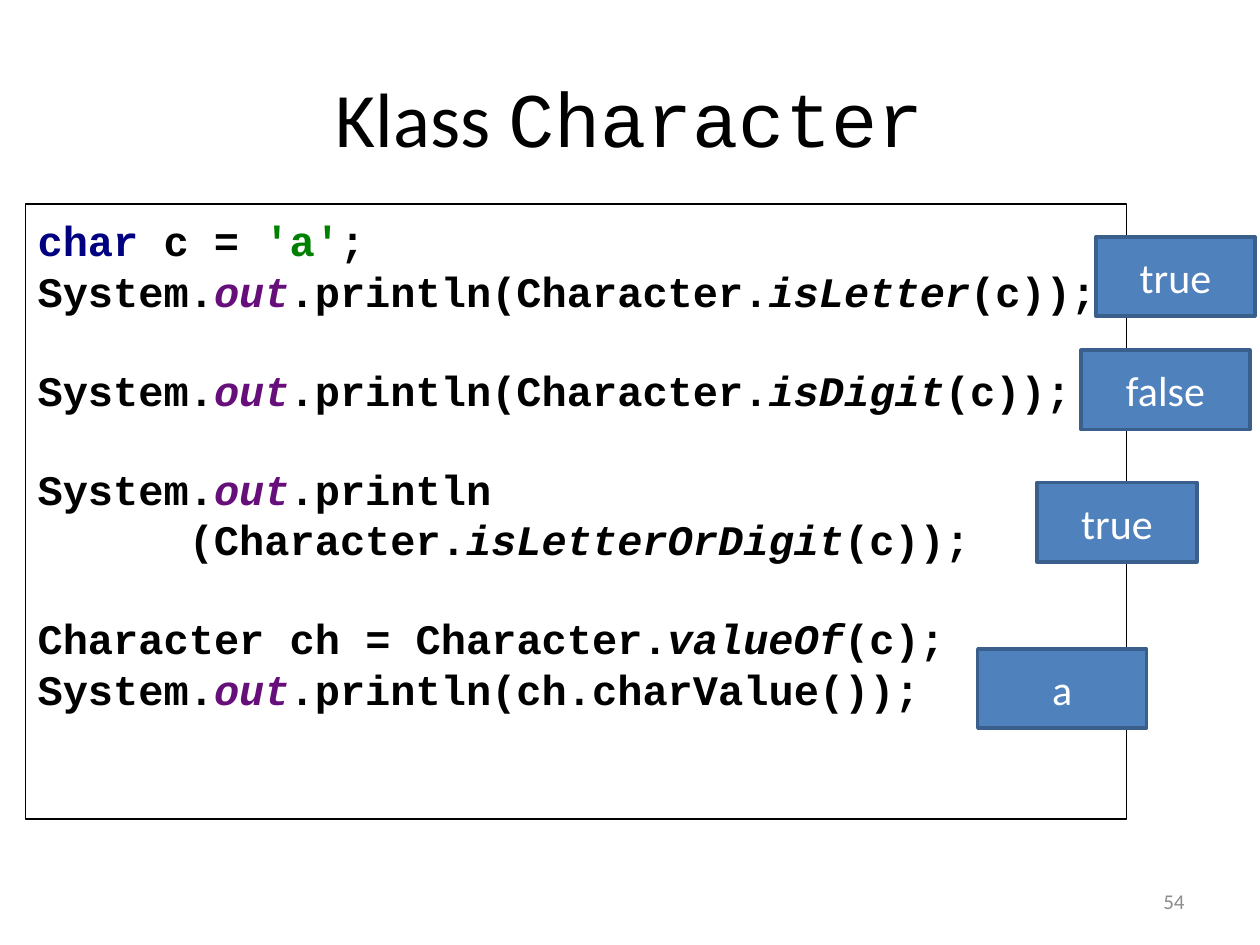
from pptx import Presentation
from pptx.dml.color import RGBColor
from pptx.enum.shapes import MSO_SHAPE
from pptx.enum.text import MSO_ANCHOR, PP_ALIGN
from pptx.util import Inches, Pt

COLORS = {
    "text": "000000", "keyword": "000080", "string": "008000",
    "field": "660E7A", "number": "8C8C8C", "white": "FFFFFF",
    "result": "4F81BD", "result_edge": "3A5F8C",
}
CODE_SIZE = 24
LINE_HEIGHT = 29
BLOCK_GAP = 27.5
INDENT = 1.2

STYLES = {
    "plain": {},
    "keyword": {"color": "keyword"},
    "string": {"color": "string"},
    "field": {"color": "field", "italic": True},
    "method": {"italic": True},
}
PRINT = [("System.", "plain"), ("out", "field")]


def check_call(method, opening):
    return [(opening, "plain"), (method, "method"), ("(c));", "plain")]


# Each line: space before, left indent, styled spans
CODE_LINES = [
    (0, 0, [("char ", "keyword"), ("c = ", "plain"), ("'a'", "string"), (";", "plain")]),
    (0, 0, PRINT + check_call("isLetter", ".println(Character.")),
    (BLOCK_GAP, 0, PRINT + check_call("isDigit", ".println(Character.")),
    (BLOCK_GAP, 0, PRINT + [(".println", "plain")]),
    (0, INDENT, check_call("isLetterOrDigit", "(Character.")),
    (BLOCK_GAP, 0, [("Character ch = Character.", "plain"), ("valueOf", "method"),
                    ("(c);", "plain")]),
    (0, 0, PRINT + [(".println(ch.charValue());", "plain")]),
]

# Each result: text, left, top, width
RESULTS = [
    ("true", 8.7, 1.88, 1.26),
    ("true", 8.23, 3.83, 1.27),
    ("false", 8.58, 2.78, 1.34),
    ("a", 7.76, 5.15, 1.34),
]


def rgb(name):
    return RGBColor.from_string(COLORS[name])


def add_span(para, text, size=CODE_SIZE, font="Calibri", color="text",
             bold=False, italic=False):
    span = para.add_run()
    span.text = text
    span.font.size = Pt(size)
    span.font.name = font
    span.font.bold = bold
    span.font.italic = italic
    span.font.color.rgb = rgb(color)


def add_box(slide, left, top, width, height, edge, edge_width, fill=None):
    box = slide.shapes.add_shape(MSO_SHAPE.RECTANGLE, Inches(left), Inches(top),
                                 Inches(width), Inches(height))
    box.shadow.inherit = False
    if fill:
        box.fill.solid()
        box.fill.fore_color.rgb = rgb(fill)
    else:
        box.fill.background()
    box.line.color.rgb = rgb(edge)
    box.line.width = Pt(edge_width)
    box.text_frame.word_wrap = True
    return box


def set_title(slide):
    title = slide.shapes.title
    title.left, title.top = Inches(0.5), Inches(0.3)
    title.width, title.height = Inches(9), Inches(1.25)
    title.text_frame.vertical_anchor = MSO_ANCHOR.MIDDLE
    para = title.text_frame.paragraphs[0]
    para.alignment = PP_ALIGN.CENTER
    add_span(para, "Klass ", size=44)
    add_span(para, "Character", size=44, font="Courier New")


def add_code(slide):
    frame = add_box(slide, 0.2, 1.62, 8.74, 4.88, "text", 0.75).text_frame
    frame.vertical_anchor = MSO_ANCHOR.TOP
    frame.margin_top = Inches(0.08)
    for index, (gap, indent, spans) in enumerate(CODE_LINES):
        para = frame.add_paragraph() if index else frame.paragraphs[0]
        para.alignment = PP_ALIGN.LEFT
        para.line_spacing = Pt(LINE_HEIGHT)
        para.space_before = Pt(gap)
        if indent:
            para._p.get_or_add_pPr().set("marL", str(Inches(indent)))
        for text, style in spans:
            add_span(para, text, font="Courier New", bold=True, **STYLES[style])


def add_result(slide, text, left, top, width):
    box = add_box(slide, left, top, width, 0.63, "result_edge", 2, fill="result")
    box.text_frame.vertical_anchor = MSO_ANCHOR.MIDDLE
    para = box.text_frame.paragraphs[0]
    para.alignment = PP_ALIGN.CENTER
    add_span(para, text, color="white")


def add_slide_number(slide, text):
    box = slide.shapes.add_textbox(Inches(7.17), Inches(6.95), Inches(2.33), Inches(0.4))
    box.text_frame.word_wrap = True
    box.text_frame.vertical_anchor = MSO_ANCHOR.MIDDLE
    para = box.text_frame.paragraphs[0]
    para.alignment = PP_ALIGN.RIGHT
    add_span(para, text, size=12, color="number")


def main():
    deck = Presentation()
    deck.slide_width, deck.slide_height = Inches(10), Inches(7.5)
    slide = deck.slides.add_slide(deck.slide_layouts[5])
    set_title(slide)
    add_slide_number(slide, "54")
    add_code(slide)
    for result in RESULTS:
        add_result(slide, *result)
    deck.save("out.pptx")


if __name__ == "__main__":
    main()
